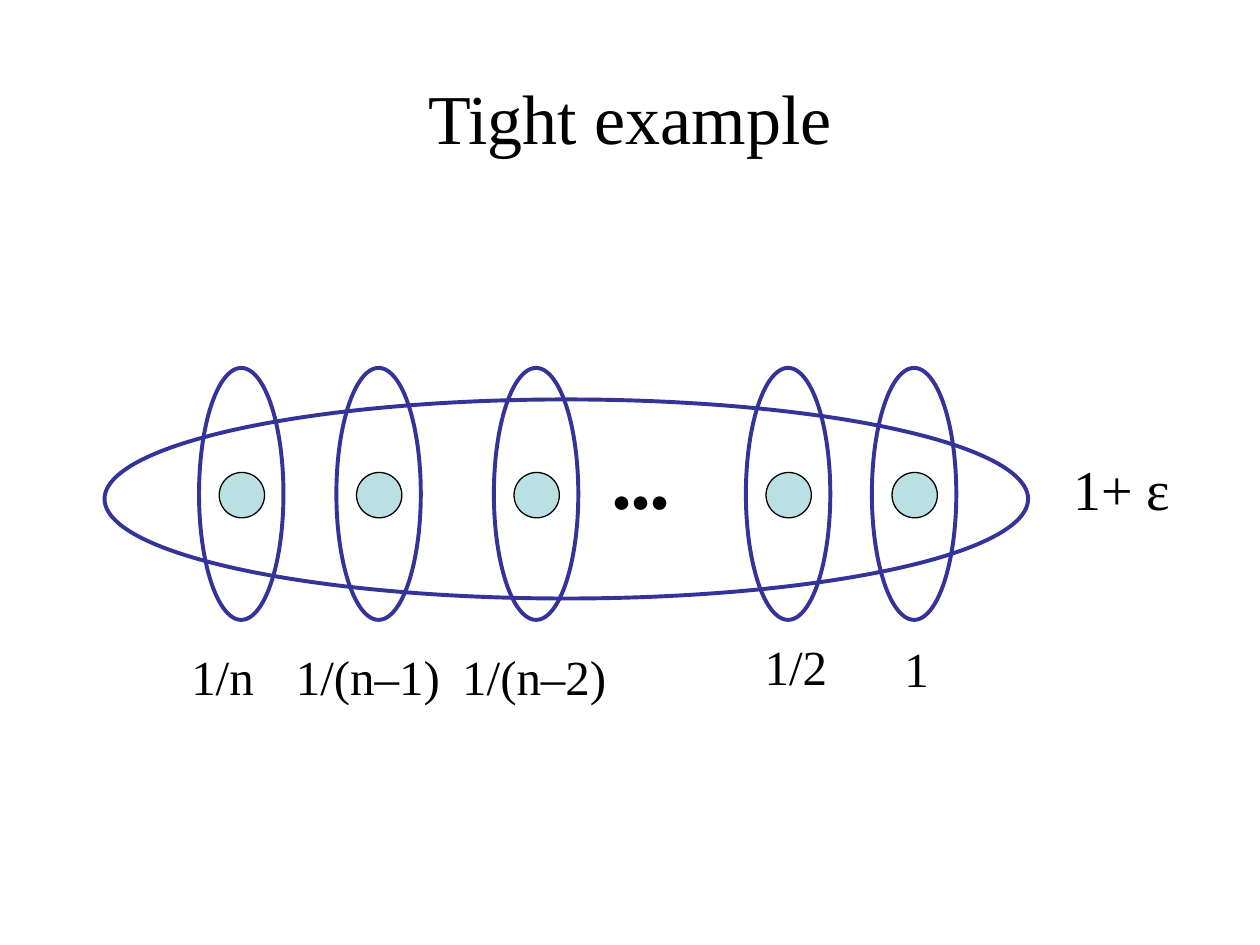
from pptx import Presentation
from pptx.dml.color import RGBColor
from pptx.enum import shapes, text
from pptx.util import Inches, Pt

BLACK = RGBColor(0x00, 0x00, 0x00)
BLUE = RGBColor(0x33, 0x33, 0x99)
TEAL = RGBColor(0xBB, 0xE0, 0xE3)
SERIF = "Times New Roman"
SANS = "Arial"

SETS = [
    (1.58, "1/n", 1.42, 5.08, 0.7),
    (2.67, "1/(n–1)", 2.25, 5.08, 1.35),
    (3.92, "1/(n–2)", 3.57, 5.08, 1.35),
    (5.92, "1/2", 5.97, 5, 0.7),
    (6.92, "1", 7.08, 5.02, 0.4),
]


def add_oval(slide, left, top, width, height, color, weight, fill=None):
    """Add an ellipse, hollow unless a fill is given."""
    oval = slide.shapes.add_shape(
        shapes.MSO_SHAPE.OVAL,
        Inches(left), Inches(top), Inches(width), Inches(height))
    oval.shadow.inherit = False
    if fill is None:
        oval.fill.background()
    else:
        oval.fill.solid()
        oval.fill.fore_color.rgb = fill
    oval.line.color.rgb = color
    oval.line.width = Pt(weight)


def add_label(slide, words, left, top, width, height, size, font=SERIF):
    """Add one line of unwrapped text and return its box."""
    box = slide.shapes.add_textbox(
        Inches(left), Inches(top), Inches(width), Inches(height))
    frame = box.text_frame
    frame.word_wrap = False
    frame.auto_size = text.MSO_AUTO_SIZE.SHAPE_TO_FIT_TEXT
    run = frame.paragraphs[0].add_run()
    run.text = words
    run.font.size = Pt(size)
    run.font.name = font
    run.font.color.rgb = BLACK
    return box


def add_title(slide, words):
    """Add the centred slide title."""
    frame = add_label(slide, words, 0.5, 0.3, 9, 1.25, 40).text_frame
    frame.word_wrap = True
    frame.auto_size = text.MSO_AUTO_SIZE.NONE
    frame.vertical_anchor = text.MSO_ANCHOR.MIDDLE
    frame.paragraphs[0].alignment = text.PP_ALIGN.CENTER


def main():
    """Build the set cover slide and save it."""
    deck = Presentation()
    deck.slide_width, deck.slide_height = Inches(10), Inches(7.5)
    slide = deck.slides.add_slide(deck.slide_layouts[6])
    add_title(slide, "Tight example")
    for left, *_ in SETS:
        add_oval(slide, left + 0.16, 3.75, 0.36, 0.36, BLACK, 0.75, TEAL)
    add_oval(slide, 0.83, 3.17, 7.33, 1.58, BLUE, 2.25)
    for left, *_ in SETS:
        add_oval(slide, left, 2.92, 0.67, 2, BLUE, 2.25)
    add_label(slide, "●●●", 4.76, 3.77, 0.65, 0.4, 18, SANS)
    add_label(slide, "1+ ε", 8.42, 3.56, 0.97, 0.63, 32)
    for _, cost, left, top, width in SETS:
        add_label(slide, cost, left, top, width, 0.57, 28)
    deck.save("out.pptx")


if __name__ == "__main__":
    main()
